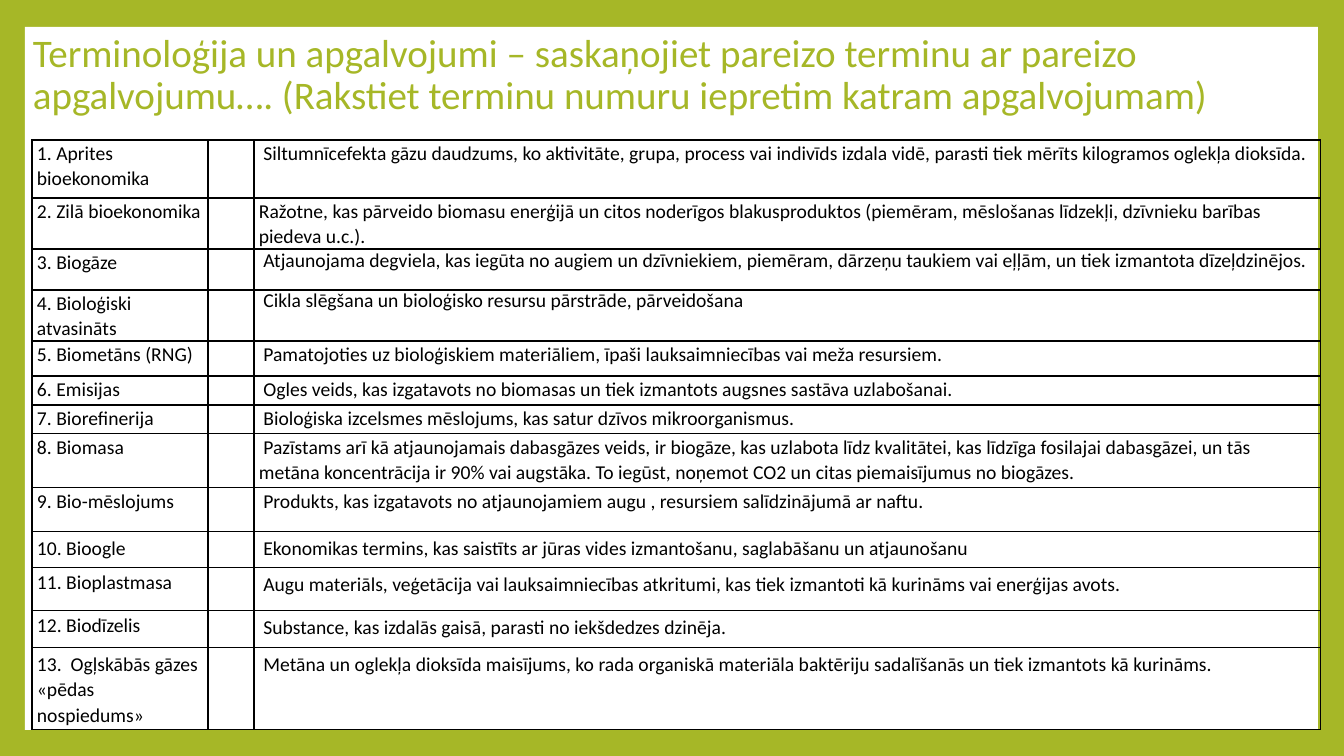
from lxml.etree import SubElement
from pptx import Presentation
from pptx.dml.color import RGBColor
from pptx.enum.shapes import MSO_SHAPE
from pptx.enum.text import MSO_ANCHOR
from pptx.oxml.ns import qn
from pptx.util import Emu, Pt

GREEN = RGBColor(0xA6, 0xB7, 0x27)
WHITE = RGBColor(0xFF, 0xFF, 0xFF)
BLACK = RGBColor(0x00, 0x00, 0x00)
FONT = "Calibri"

TITLE = ("Terminoloģija un apgalvojumi – saskaņojiet pareizo terminu ar pareizo "
         "apgalvojumu…. (Rakstiet terminu numuru iepretim katram apgalvojumam)")

# Row height in px, term, statement
ROWS = [
    (58, "1. Aprites bioekonomika",
     " Siltumnīcefekta gāzu daudzums, ko aktivitāte, grupa, process vai indivīds izdala vidē, "
     "parasti tiek mērīts kilogramos oglekļa dioksīda."),
    (51, "2. Zilā bioekonomika",
     "Ražotne, kas pārveido biomasu enerģijā un citos noderīgos blakusproduktos (piemēram, "
     "mēslošanas līdzekļi, dzīvnieku barības piedeva u.c.)."),
    (41, "3. Biogāze",
     " Atjaunojama degviela, kas iegūta no augiem un dzīvniekiem, piemēram, dārzeņu taukiem "
     "vai eļļām, un tiek izmantota dīzeļdzinējos."),
    (51, "4. Bioloģiski atvasināts",
     " Cikla slēgšana un bioloģisko resursu pārstrāde, pārveidošana"),
    (35, "5. Biometāns (RNG)",
     " Pamatojoties uz bioloģiskiem materiāliem, īpaši lauksaimniecības vai meža resursiem."),
    (29, "6. Emisijas",
     " Ogles veids, kas izgatavots no biomasas un tiek izmantots augsnes sastāva uzlabošanai."),
    (29, "7. Biorefinerija",
     " Bioloģiska izcelsmes mēslojums, kas satur dzīvos mikroorganismus."),
    (54, "8. Biomasa",
     " Pazīstams arī kā atjaunojamais dabasgāzes veids, ir biogāze, kas uzlabota līdz "
     "kvalitātei, kas līdzīga fosilajai dabasgāzei, un tās metāna koncentrācija ir 90% vai "
     "augstāka. To iegūst, noņemot CO2 un citas piemaisījumus no biogāzes."),
    (44, "9. Bio-mēslojums",
     " Produkts, kas izgatavots no atjaunojamiem augu , resursiem salīdzinājumā ar naftu."),
    (36, "10. Bioogle",
     " Ekonomikas termins, kas saistīts ar jūras vides izmantošanu, saglabāšanu un atjaunošanu"),
    (43, "11. Bioplastmasa",
     " Augu materiāls, veģetācija vai lauksaimniecības atkritumi, kas tiek izmantoti kā "
     "kurināms vai enerģijas avots."),
    (37, "12. Biodīzelis",
     " Substance, kas izdalās gaisā, parasti no iekšdedzes dzinēja."),
    (82, "13.  Ogļskābās gāzes «pēdas nospiedums»",
     " Metāna un oglekļa dioksīda maisījums, ko rada organiskā materiāla baktēriju "
     "sadalīšanās un tiek izmantots kā kurināms."),
]
COLUMN_WIDTHS = [176, 46, 1067]
FIRST_PADDED_ROW = 9
# Line spacing of the cells (row, column) that differ from the usual 1.07
SPECIAL_SPACING = {(2, 2): 1.0, (3, 2): 0.9, (10, 0): 1.0, (11, 0): 1.0}


def px(length):
    return Emu(round(length * 914400 / 100.8))


def add_background(slide, left, top, width, height):
    """White panel on the green slide."""
    slide.background.fill.solid()
    slide.background.fill.fore_color.rgb = GREEN
    panel = slide.shapes.add_shape(MSO_SHAPE.RECTANGLE, px(left), px(top), px(width), px(height))
    panel.shadow.inherit = False
    panel.fill.solid()
    panel.fill.fore_color.rgb = WHITE
    panel.line.fill.background()


def style_paragraph(paragraph, size, color, spacing):
    paragraph.font.name = FONT
    paragraph.font.size = Pt(size)
    paragraph.font.color.rgb = color
    paragraph.line_spacing = spacing


def add_title(slide, left, top, width, height):
    frame = slide.shapes.add_textbox(px(left), px(top), px(width), px(height)).text_frame
    frame.word_wrap = True
    frame.vertical_anchor = MSO_ANCHOR.MIDDLE
    frame.text = TITLE
    style_paragraph(frame.paragraphs[0], 27.9, GREEN, 0.9)


def add_borders(cell):
    properties = cell._tc.get_or_add_tcPr()
    for side in ("a:lnL", "a:lnR", "a:lnT", "a:lnB"):
        line = SubElement(properties, qn(side), w=str(Pt(1)))
        fill = SubElement(line, qn("a:solidFill"))
        SubElement(fill, qn("a:srgbClr"), val=str(BLACK))


def fill_cell(cell, text, spacing, padding):
    add_borders(cell)
    cell.fill.background()
    cell.margin_left = cell.margin_right = px(5)
    cell.margin_top = cell.margin_bottom = px(padding)
    cell.text = text
    paragraph = cell.text_frame.paragraphs[0]
    style_paragraph(paragraph, 14, BLACK, spacing)
    paragraph.space_after = Pt(8)


def add_term_table(slide, left, top):
    """Terms, an empty answer column and statements."""
    width = sum(COLUMN_WIDTHS)
    height = sum(row[0] for row in ROWS)
    table = slide.shapes.add_table(len(ROWS), len(COLUMN_WIDTHS),
                                   px(left), px(top), px(width), px(height)).table
    table.first_row = table.horz_banding = False
    for column, column_width in zip(table.columns, COLUMN_WIDTHS):
        column.width = px(column_width)
    for row_index, (row_height, term, statement) in enumerate(ROWS):
        table.rows[row_index].height = px(row_height)
        padding = 3 if row_index >= FIRST_PADDED_ROW else 0
        for column_index, text in enumerate((term, "", statement)):
            spacing = SPECIAL_SPACING.get((row_index, column_index), 1.07)
            fill_cell(table.cell(row_index, column_index), text, spacing, padding)


def main():
    presentation = Presentation()
    presentation.slide_width = px(1344)
    presentation.slide_height = px(756)
    slide = presentation.slides.add_slide(presentation.slide_layouts[6])
    add_background(slide, 25, 27, 1293, 703)
    add_title(slide, 23, 11, 1287, 130)
    add_term_table(slide, 32, 140)
    presentation.save("out.pptx")


if __name__ == "__main__":
    main()
